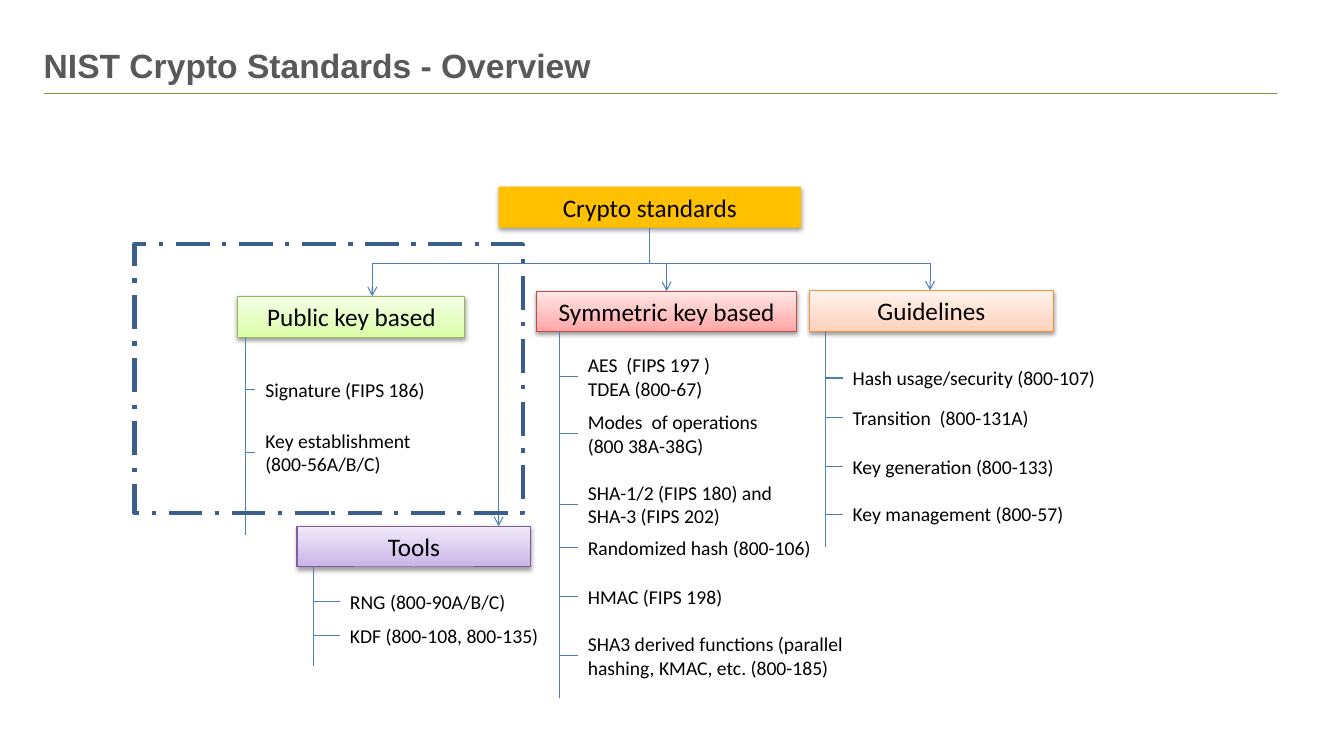
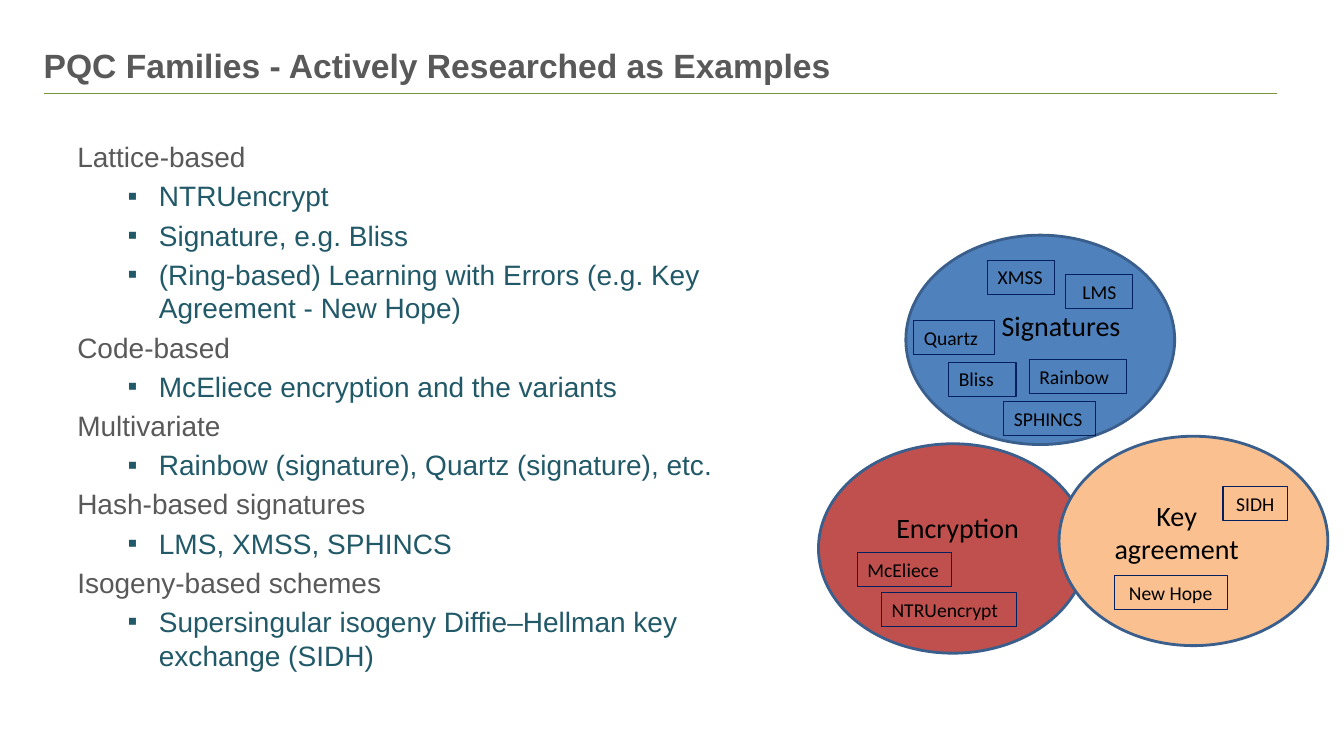
import dataclasses

import lxml.etree
import pptx
import pptx.dml.color
import pptx.enum.dml
import pptx.enum.shapes
import pptx.enum.text
import pptx.oxml.ns
import pptx.util


@dataclasses.dataclass(frozen=True)
class Theme:
    heading_font: str = "Arial"
    label_font: str = "Calibri"
    title_size: int = 24
    body_size: int = 20
    node_size: int = 18
    item_size: int = 14
    grey: str = "595959"
    teal: str = "215968"
    black: str = "000000"
    rule: str = "77933C"
    wire: str = "4B7EBC"
    outline: str = "3A5F8C"
    tag: str = "002060"
    gold: str = "FFC000"
    green: tuple = ("DAFDA7", "F5FFE7")
    green_edge: str = "98B955"
    purple: tuple = ("C9B5E8", "F0EAF9")
    purple_edge: str = "7D60A0"
    red: tuple = ("FFA6A5", "FFE7E7")
    red_edge: str = "BF4C48"
    orange: tuple = ("FFD2BD", "FFF2ED")
    orange_edge: str = "F69240"
    blue_oval: str = "4F81BD"
    red_oval: str = "C0504D"
    peach_oval: str = "FAC090"


theme = Theme()
Pt, Inches = pptx.util.Pt, pptx.util.Inches
rgb = pptx.dml.color.RGBColor.from_string
qn = pptx.oxml.ns.qn
SHAPE = pptx.enum.shapes.MSO_SHAPE
ALIGN = pptx.enum.text.PP_ALIGN
ANCHOR = pptx.enum.text.MSO_ANCHOR

prs = pptx.Presentation()
prs.slide_width, prs.slide_height = Inches(13.333), Inches(7.5)
# One column and one row are one percent of the slide
COL, ROW = prs.slide_width / 100, prs.slide_height / 100


def style(sp, text="", at=None, fill=None, edge=None, width=0.75, shadow=False,
          size=theme.item_size, color=theme.black, font=theme.label_font,
          bold=False, align=ALIGN.LEFT, anchor=ANCHOR.MIDDLE, spacing=None):
    """Place, paint and write a shape; text is a string or (text, color) pairs."""
    if at:
        sp.left, sp.top = int(at[0] * COL), int(at[1] * ROW)
        sp.width, sp.height = int(at[2] * COL), int(at[3] * ROW)
    if not sp.is_placeholder:
        sp.shadow.inherit = False
        if isinstance(fill, tuple):
            sp.fill.gradient()
            sp.fill.gradient_angle = 90
            for stop, value in zip(sp.fill.gradient_stops, fill):
                stop.color.rgb = rgb(value)
        elif fill:
            sp.fill.solid()
            sp.fill.fore_color.rgb = rgb(fill)
        else:
            sp.fill.background()
        if edge:
            sp.line.color.rgb, sp.line.width = rgb(edge), Pt(width)
        else:
            sp.line.fill.background()
    if shadow:
        effects = sp.element.spPr.find(qn("a:effectLst"))
        outer = lxml.etree.SubElement(effects, qn("a:outerShdw"), blurRad="40000",
                                      dist="20000", dir="5400000", rotWithShape="0")
        tint = lxml.etree.SubElement(outer, qn("a:srgbClr"), val=theme.black)
        lxml.etree.SubElement(tint, qn("a:alpha"), val="38000")
    tf = sp.text_frame
    tf.word_wrap, tf.vertical_anchor = True, anchor
    tf.auto_size = pptx.enum.text.MSO_AUTO_SIZE.NONE
    lines = [(text, color)] if isinstance(text, str) else text
    for i, (words, tone) in enumerate(lines):
        if not words:
            continue
        p = tf.add_paragraph() if i else tf.paragraphs[0]
        p.alignment = align
        if spacing:
            p.line_spacing = Pt(spacing)
        r = p.add_run()
        r.text = words
        r.font.name, r.font.size, r.font.bold = font, Pt(size), bold
        r.font.color.rgb = rgb(tone)
    return sp


def wire(s, x1, y1, x2, y2, color=theme.wire, arrow=False):
    """Draw a thin straight line between two grid points."""
    c = s.shapes.add_connector(pptx.enum.shapes.MSO_CONNECTOR.STRAIGHT,
                               int(x1 * COL), int(y1 * ROW), int(x2 * COL), int(y2 * ROW))
    c.line.color.rgb, c.line.width = rgb(color), Pt(0.75)
    if arrow:
        lxml.etree.SubElement(c.element.spPr.find(qn("a:ln")), qn("a:tailEnd"), type="arrow")
    lxml.etree.SubElement(c.element.spPr, qn("a:effectLst"))
    return c


# Both slides, with the title place and the rule kept on the master
overview = prs.slides.add_slide(prs.slide_layouts[5])
families = prs.slides.add_slide(prs.slide_layouts[1])
master_title = prs.slide_master.placeholders[0]
style(master_title, at=(2.5, 0.9, 92.5, 11.1), anchor=ANCHOR.BOTTOM)
rule = wire(overview, 3.3, 12.4, 95, 12.4, color=theme.rule)
master_title.element.addprevious(rule.element)

for s, title in ((overview, "NIST Crypto Standards - Overview"),
                 (families, "PQC Families - Actively Researched as Examples")):
    style(s.shapes.title, title, size=theme.title_size, color=theme.grey, bold=True,
          font=theme.heading_font, anchor=ANCHOR.BOTTOM, spacing=26)

# Slide 1: root of the tree and its bus line
s = overview
NODE_H, BUS_Y = 5.4, 34.8
ROOT_X, ROOT_Y, ROOT_W = 37.1, 24.7, 22.5
node = dict(size=theme.node_size, align=ALIGN.CENTER, shadow=True)
style(s.shapes.add_shape(SHAPE.RECTANGLE, 0, 0, 0, 0), "Crypto standards",
      (ROOT_X, ROOT_Y, ROOT_W, NODE_H), fill=theme.gold, **node)
root_mid = ROOT_X + ROOT_W / 2
wire(s, root_mid, ROOT_Y + NODE_H, root_mid, BUS_Y)

# Branches: name, left, top, width, fill, edge, arrow x, stem x, stem end, item left,
# items (text, middle, width, lines)
branches = [
    ("Public key based", 17.7, 39.2, 16.9, theme.green, theme.green_edge,
     27.7, 18.3, 70.8, 19, [
         ("Signature (FIPS 186)", 51.5, 14.4, 1),
         ("Key establishment (800-56A/B/C)", 59.8, 14.4, 2)]),
    ("Tools", 22.1, 69.6, 17.4, theme.purple, theme.purple_edge,
     37.1, 23.3, 88.1, 25.3, [
         ("RNG (800-90A/B/C)", 79.6, 16.2, 1),
         ("KDF (800-108, 800-135)", 84.1, 16.2, 1)]),
    ("Symmetric key based", 39.9, 38.5, 19.4, theme.red, theme.red_edge,
     49.6, 41.6, 92.3, 43, [
         ("AES  (FIPS 197 ) TDEA (800-67)", 49.8, 12.8, 2),
         ("Modes  of operations (800 38A-38G)", 57.4, 14.4, 2),
         ("SHA-1/2 (FIPS 180) and SHA-3 (FIPS 202)", 66.7, 16.8, 2),
         ("Randomized hash (800-106)", 72.4, 18.4, 1),
         ("HMAC (FIPS 198)", 78.9, 14.1, 1),
         ("SHA3 derived functions (parallel hashing, KMAC, etc. (800-185)", 86.7, 20.9, 2)]),
    ("Guidelines", 60.2, 38.4, 18.2, theme.orange, theme.orange_edge,
     69.2, 61.4, 72.4, 62.7, [
         ("Hash usage/security (800-107)", 50, 20.4, 1),
         ("Transition  (800-131A)", 55.2, 20.4, 1),
         ("Key generation (800-133)", 61.7, 20.4, 1),
         ("Key management (800-57)", 68, 20.4, 1)]),
]
wire(s, branches[0][6], BUS_Y, branches[-1][6], BUS_Y)
for name, x, y, w, fill, edge, arrow_x, stem_x, stem_end, item_x, items in branches:
    style(s.shapes.add_shape(SHAPE.RECTANGLE, 0, 0, 0, 0), name, (x, y, w, NODE_H),
          fill=fill, edge=edge, **node)
    wire(s, arrow_x, BUS_Y, arrow_x, y, arrow=True)
    wire(s, stem_x, y + NODE_H, stem_x, stem_end)
    for text, mid, item_w, lines in items:
        item_h = 1.4 + 3.1 * lines
        style(s.shapes.add_textbox(0, 0, 0, 0), text,
              (item_x, mid - item_h / 2, item_w, item_h))
        wire(s, stem_x, mid, item_x, mid)

# Dashed frame around the public key branch
frame = style(s.shapes.add_shape(SHAPE.RECTANGLE, 0, 0, 0, 0), at=(10, 32.3, 28.9, 35.6),
              edge=theme.outline, width=3)
frame.line.dash_style = pptx.enum.dml.MSO_LINE.LONG_DASH_DOT

# Slide 2: list of families
s = families
groups = {
    "Lattice-based": ["NTRUencrypt", "Signature, e.g. Bliss",
                      "(Ring-based) Learning with Errors (e.g. Key Agreement - New Hope)"],
    "Code-based": ["McEliece encryption and the variants"],
    "Multivariate": ["Rainbow (signature), Quartz (signature), etc."],
    "Hash-based signatures": ["LMS, XMSS, SPHINCS"],
    "Isogeny-based schemes": ["Supersingular isogeny Diffie–Hellman key exchange (SIDH)"],
}
rows = []
for family, schemes in groups.items():
    rows += [(family, theme.grey)] + [(scheme, theme.teal) for scheme in schemes]
body = style(s.placeholders[1], rows, (5, 17.8, 55.1, 78.9), size=theme.body_size,
             font=theme.heading_font, anchor=ANCHOR.TOP)
for p, (text, color) in zip(body.text_frame.paragraphs, rows):
    nested = color == theme.teal
    p.level = int(nested)
    margin, hang = (0.81, 0.31) if nested else (0.38, 0.38)
    pPr = p._p.get_or_add_pPr()
    pPr.set("marL", str(Inches(margin)))
    pPr.set("indent", str(-Inches(hang)))
    if nested:
        lxml.etree.SubElement(pPr, qn("a:buFont"), typeface=theme.heading_font)
        lxml.etree.SubElement(pPr, qn("a:buChar"), char="▪")
    else:
        lxml.etree.SubElement(pPr, qn("a:buNone"))

# Ovals with their labels: oval left and top, label left, top and height
for text, fill, x, y, label_x, label_y, label_h in (
        ("Signatures", theme.blue_oval, 67.4, 31.1, 72.7, 40.1, 5.9),
        ("Encryption", theme.red_oval, 60.9, 58.7, 65, 66.8, 5.9),
        ("Key agreement", theme.peach_oval, 78.8, 57.7, 81.3, 65.2, 10.3)):
    style(s.shapes.add_shape(SHAPE.OVAL, 0, 0, 0, 0), at=(x, y, 20, 27.7),
          fill=fill, edge=theme.outline, width=2)
    style(s.shapes.add_textbox(0, 0, 0, 0), text, (label_x, label_y, 12.5, label_h),
          size=theme.body_size, align=ALIGN.CENTER)

# Scheme tags inside the ovals
for text, x, y, w, align in (
        ("XMSS", 73.5, 34.4, 5, ALIGN.LEFT),
        ("LMS", 79.3, 36.3, 5, ALIGN.CENTER),
        ("Quartz", 68, 42.4, 6, ALIGN.LEFT),
        ("Bliss", 70.6, 47.9, 5, ALIGN.LEFT),
        ("Rainbow", 76.6, 47.6, 7.2, ALIGN.LEFT),
        ("SPHINCS", 74.7, 53.1, 6.8, ALIGN.LEFT),
        ("McEliece", 63.8, 73.1, 7, ALIGN.LEFT),
        ("NTRUencrypt", 65.6, 78.4, 10, ALIGN.LEFT),
        ("SIDH", 91, 64.4, 4.8, ALIGN.CENTER),
        ("New Hope", 82.9, 76.1, 8.4, ALIGN.CENTER)):
    style(s.shapes.add_shape(SHAPE.RECTANGLE, 0, 0, 0, 0), text, (x, y, w, 4.5),
          edge=theme.tag, align=align)

prs.save("out.pptx")
